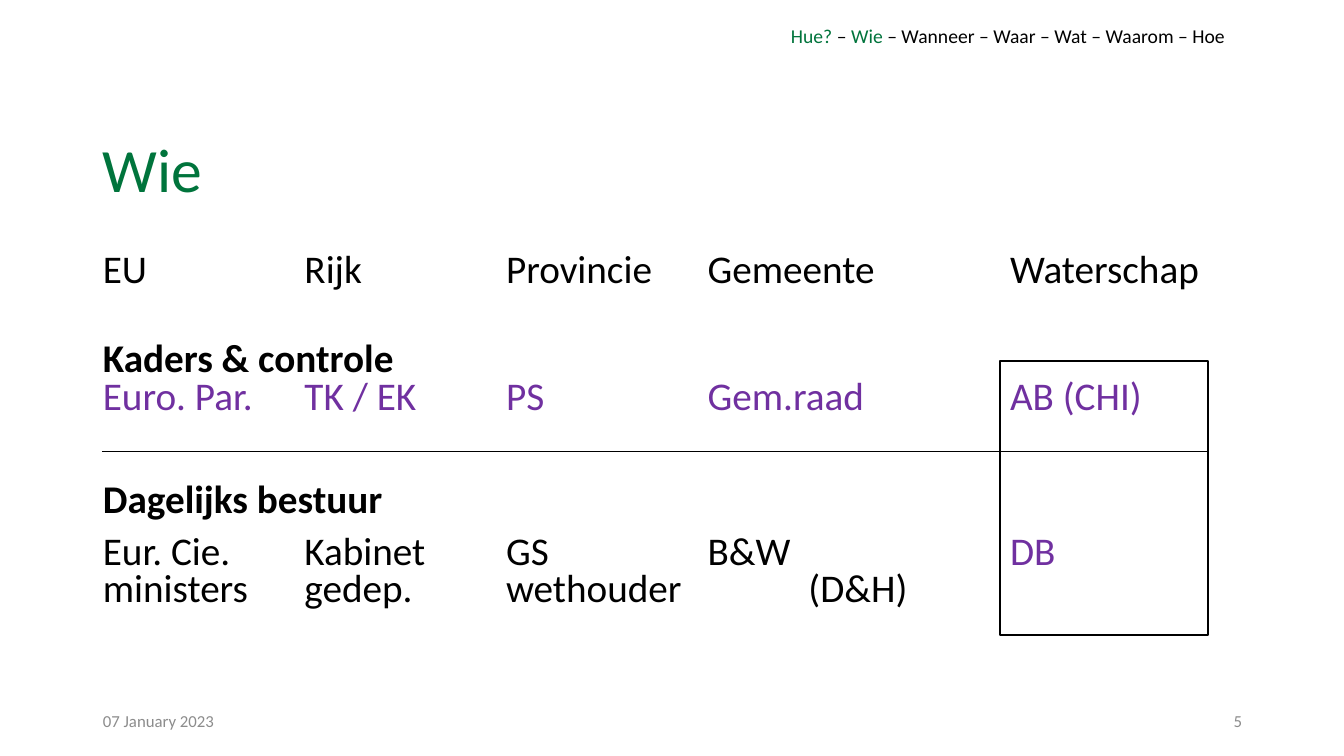
from lxml import etree
from pptx import Presentation, util as u
from pptx.dml.color import RGBColor
from pptx.enum import shapes, text as t
from pptx.oxml.ns import qn

PX = 914400 / 100.8
THEME = {
    "font": "Calibri",
    "green": "00743C", "black": "000000", "purple": "7030A0", "gray": "8C8C8C",
    "title": 44, "body": 28, "nav": 14, "foot": 12,
}


def at(*sides):
    """Turn px lengths into EMU."""
    return [u.Emu(round(side * PX)) for side in sides]


def write(para, words, color="black", size="body", bold=False):
    run = para.add_run()
    run.text = words
    font = run.font
    font.name = THEME["font"]
    font.size = u.Pt(THEME[size])
    font.bold = bold
    font.color.rgb = RGBColor.from_string(THEME[color])


deck = Presentation()
deck.slide_width, deck.slide_height = at(1344, 756)
slide = deck.slides.add_slide(deck.slide_layouts[6])

# Text boxes
MID, TOP = t.MSO_ANCHOR.MIDDLE, t.MSO_ANCHOR.TOP
frames = {}
for name, area, anchor in [
    ("title", (93, 109, 1159, 127), MID),
    ("body", (93, 248, 1159, 433), TOP),
    ("date", (93, 701, 302, 40), MID),
    ("page", (950, 701, 302, 40), MID),
    ("nav", (781, 19, 470, 34), TOP),
]:
    frame = slide.shapes.add_textbox(*at(*area)).text_frame
    frame.word_wrap = True
    frame.vertical_anchor = anchor
    frames[name] = frame

title = frames["title"].paragraphs[0]
title.line_spacing = 0.9
write(title, "Wie", "green", "title")

write(frames["date"].paragraphs[0], "07 January 2023", "gray", "foot")
page = frames["page"].paragraphs[0]
page.alignment = t.PP_ALIGN.RIGHT
write(page, "5", "gray", "foot")

for words, color in [
    ("Hue? ", "green"), ("– ", "black"), ("Wie", "green"),
    (" – Wanneer – Waar – Wat – Waarom – Hoe", "black"),
]:
    write(frames["nav"].paragraphs[0], words, color, "nav")

# Layers of government: space before in points, tab stops in inches, runs
COLS = (2, 4, 6, 9)
rows = [
    (0, COLS, [("EU\tRijk\tProvincie\tGemeente\tWaterschap", "black", False)]),
    (37, (), [("Kaders & controle", "black", True)]),
    (0, COLS, [("Euro. Par.\tTK / EK\tPS\tGem.raad\tAB (CHI)", "purple", False)]),
    (47, (), [("Dagelijks bestuur", "black", True)]),
    (10, COLS, [("Eur. Cie.\tKabinet\tGS\tB&W\t", "black", False),
                ("DB", "purple", False)]),
    (0, (2, 4, 7), [("ministers\tgedep.\twethouder\t(D&H)", "black", False)]),
]
body = frames["body"]
for i, (before, stops, runs) in enumerate(rows):
    para = body.add_paragraph() if i else body.paragraphs[0]
    para.line_spacing = 0.8
    para.space_before = u.Pt(before)
    if stops:
        tabs = etree.SubElement(para._p.get_or_add_pPr(), qn("a:tabLst"))
        for stop in stops:
            etree.SubElement(tabs, qn("a:tab"), pos=str(u.Inches(stop)), algn="l")
    for words, color, bold in runs:
        write(para, words, color, bold=bold)

# Frame around the water board, and the rule between the two roles
black = RGBColor.from_string(THEME["black"])
board = slide.shapes.add_shape(shapes.MSO_SHAPE.RECTANGLE, *at(1000, 361, 208, 274))
board.shadow.inherit = False
board.fill.background()
rule = slide.shapes.add_connector(shapes.MSO_CONNECTOR.STRAIGHT, *at(102, 451, 1208, 451))
etree.SubElement(rule._element.spPr, qn("a:effectLst"))
for shape, width in [(board, 1), (rule, 0.5)]:
    shape.line.color.rgb = black
    shape.line.width = u.Pt(width)

deck.save("out.pptx")
